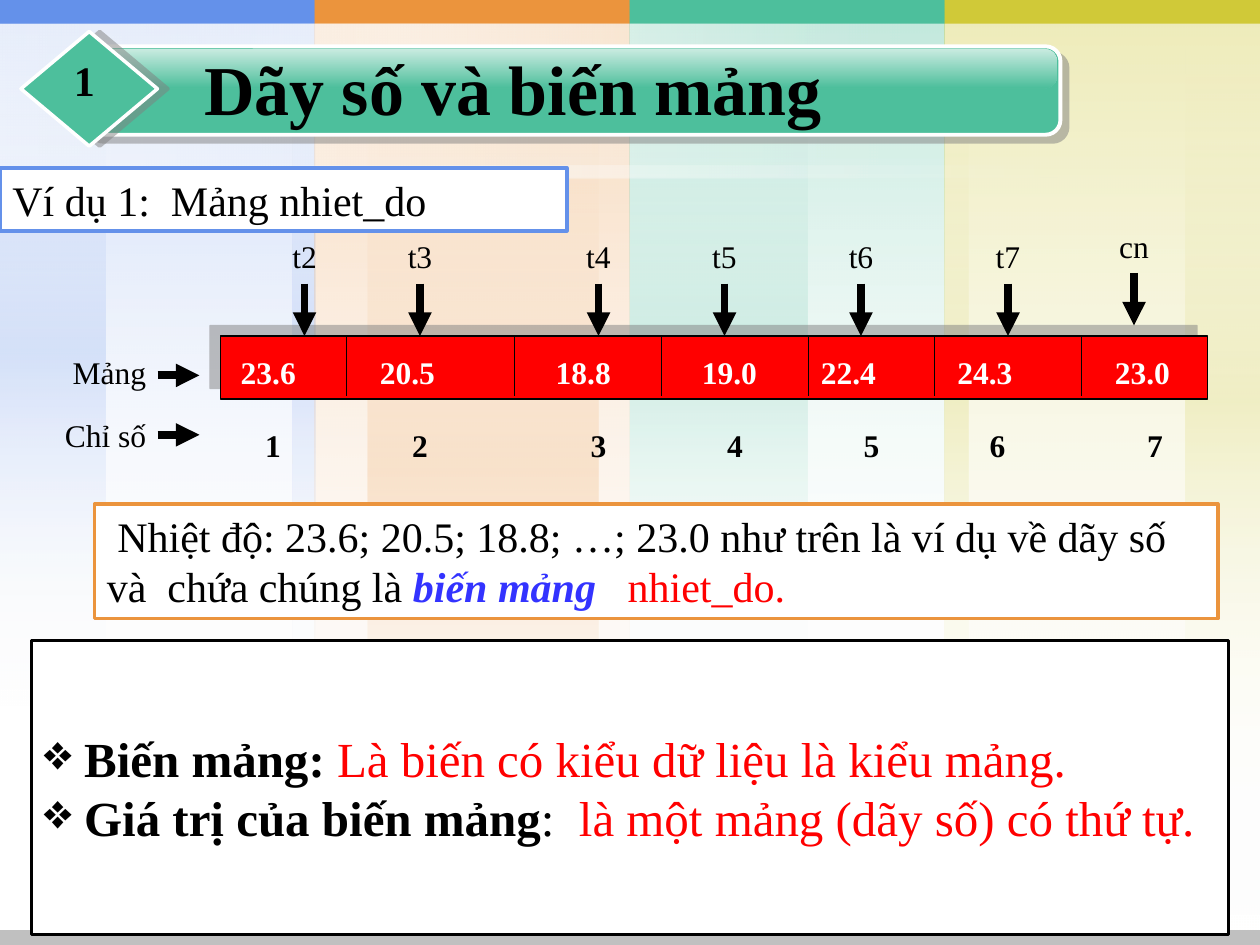
from lxml import etree
from pptx import Presentation
from pptx.dml.color import RGBColor
from pptx.enum import shapes, text
from pptx.oxml import ns
from pptx.util import Pt

FONT = "Times New Roman"
BLUE, ORANGE, GREEN, YELLOW = "6491EA", "EB943D", "4DBF9C", "D0C938"
BLACK, WHITE, RED = "000000", "FFFFFF", "FF0000"
RECT = shapes.MSO_SHAPE.RECTANGLE
ROUNDED = shapes.MSO_SHAPE.ROUNDED_RECTANGLE
DIAMOND = shapes.MSO_SHAPE.DIAMOND
CENTER = text.PP_ALIGN.CENTER


def color(value):
    return RGBColor.from_string(value)


def add_xml(parent, tag, **attributes):
    return etree.SubElement(parent, ns.qn(tag), attributes)


def add_alpha_color(parent, value, opacity):
    rgb = add_xml(parent, "a:srgbClr", val=value)
    add_xml(rgb, "a:alpha", val=str(opacity * 1000))


def add_shadow(effects, distance, angle):
    outer = add_xml(effects, "a:outerShdw", dist=str(Pt(distance)),
                    dir=str(angle * 60000), algn="ctr", rotWithShape="0")
    add_alpha_color(outer, "808080", 50)


def set_gradient(shape, stops):
    """Fill from top to bottom with (position, colour, opacity) stops."""
    shape.fill.background()
    gradient = etree.Element(ns.qn("a:gradFill"), rotWithShape="1")
    stop_list = add_xml(gradient, "a:gsLst")
    for position, value, opacity in stops:
        stop = add_xml(stop_list, "a:gs", pos=str(position * 1000))
        add_alpha_color(stop, value, opacity)
    add_xml(gradient, "a:lin", ang="5400000", scaled="0")
    properties = shape._element.spPr
    properties.replace(properties.find(ns.qn("a:noFill")), gradient)


def add_box(slide, frame, fill, kind=RECT, line=None, width=2, shadow=None,
            corner=None, rotation=0):
    """Draw a preset shape; fill is a hex colour or a list of stops."""
    shape = slide.shapes.add_shape(kind, *map(Pt, frame))
    shape.shadow.inherit = False
    shape.rotation = rotation
    if isinstance(fill, str):
        shape.fill.solid()
        shape.fill.fore_color.rgb = color(fill)
    else:
        set_gradient(shape, fill)
    if line:
        shape.line.color.rgb = color(line)
        shape.line.width = Pt(width)
    else:
        shape.line.fill.background()
    if corner:
        shape.adjustments[0] = corner
    if shadow:
        add_shadow(shape._element.spPr.find(ns.qn("a:effectLst")), *shadow)
    return shape


def write(shape, *paragraphs, size=18, align=text.PP_ALIGN.LEFT,
          anchor=text.MSO_ANCHOR.TOP, bullet=None, shadow=None, **style):
    """Write paragraphs, each a list of (wording, style) runs or a string."""
    frame = shape.text_frame
    frame.word_wrap = True
    frame.vertical_anchor = anchor
    for number, runs in enumerate(paragraphs):
        paragraph = frame.add_paragraph() if number else frame.paragraphs[0]
        paragraph.alignment = align
        if bullet:
            add_xml(paragraph._p.get_or_add_pPr(), "a:buChar", char=bullet)
        for wording, own in [(runs, {})] if isinstance(runs, str) else runs:
            look = {"ink": BLACK, "bold": False, "italic": False} | style | own
            run = paragraph.add_run()
            run.text = wording
            run.font.name, run.font.size = FONT, Pt(size)
            run.font.bold, run.font.italic = look["bold"], look["italic"]
            run.font.color.rgb = color(look["ink"])
            if shadow:
                effects = etree.Element(ns.qn("a:effectLst"))
                add_shadow(effects, *shadow)
                run.font._element.find(ns.qn("a:solidFill")).addnext(effects)


def add_label(slide, frame, wording, **style):
    write(slide.shapes.add_textbox(*map(Pt, frame)), wording, **style)


def add_line(slide, start, end, width=0.75, arrow=False):
    line = slide.shapes.add_connector(shapes.MSO_CONNECTOR.STRAIGHT,
                                      *map(Pt, start + end))
    line.line.color.rgb = color(BLACK)
    line.line.width = Pt(width)
    if arrow:
        add_xml(line.line._get_or_add_ln(), "a:tailEnd", type="triangle")
    add_xml(line._element.spPr, "a:effectLst")


def add_arrow(slide, start, end):
    add_line(slide, start, end, width=4.5, arrow=True)


def draw_background(slide):
    column = 180
    columns = [
        (BLUE, 405, [(167, 13), (0, 60.5)]),
        (ORANGE, 540, [(210, 132)]),
        (GREEN, 405, [(360, 101.5)]),
        (YELLOW, 538, [(540, 13.5), (677.5, 42.5)]),
    ]
    for number, (tint, height, strips) in enumerate(columns):
        left = number * column
        fade = [(0, tint, 20), (100, WHITE, 0)]
        glow = [(0, WHITE, 0), (50, tint, 20), (100, WHITE, 0)]
        strip_height = 459 if tint == YELLOW else height
        add_box(slide, (left, 0, column, height), fade)
        for strip_left, width in strips:
            add_box(slide, (strip_left, 0, width, strip_height), glow)
        add_box(slide, (left, 0, column, height), fade)
        add_box(slide, (left, 0, column, 13.5), tint)

    sheen = [(0, WHITE, 35), (100, WHITE, 0)]
    streak = [(0, WHITE, 0), (50, WHITE, 35), (100, WHITE, 0)]
    band = (227, -212.5, 88, 541)
    for frame, stops in [((299.5, -205, 7, 606), streak), (band, sheen),
                         ((220.5, -206.5, 21, 461.5), streak), (band, sheen)]:
        add_box(slide, frame, stops, rotation=270)
    add_box(slide, (0, 531.5, 720, 8.5), "C0C0C0")


def draw_title(slide):
    add_box(slide, (47, 26.5, 559, 50.5), GREEN, ROUNDED, WHITE, 2.25,
            shadow=(5.7, 45), corner=0.167)
    add_box(slide, (51, 28, 553, 22.5), [(0, WHITE, 70), (100, GREEN, 70)],
            ROUNDED, corner=0.315)
    add_label(slide, (109.5, 22.5, 466.5, 55.5), "Dãy số và biến mảng",
              size=40, bold=True, shadow=(2, 45))
    add_box(slide, (12, 18, 78, 65.5), GREEN, DIAMOND, WHITE, shadow=(6, 0))
    add_label(slide, (28, 27.5, 40.5, 36), "1", size=24, bold=True,
              align=CENTER)


def draw_array(slide):
    top, bottom = 192, 226.5
    add_box(slide, (126, top, 564, 36), RED, line=BLACK, width=0.75,
            shadow=(8.5, 225))
    for x in (198, 294, 378, 462, 534, 618):
        add_line(slide, (x, top), (x, bottom))

    # day, arrow x, arrow end, value, value left, index centre
    cells = [
        ("t2", 174, 192, " 23.6", 126, 156),
        ("t3", 240, 192, "20.5", 210, 240),
        ("t4", 342, 192, " 18.8", 306, 342),
        ("t5", 414, 192, "19.0", 394, 420),
        ("t6", 492, 192, "22.4", 462, 498),
        ("t7", 576, 192, "24.3", 540, 570),
        ("cn", 648, 186, "23.0", 630, 660),
    ]
    for index, (day, x, tip, value, left, middle) in enumerate(cells, 1):
        add_arrow(slide, (x, tip - 30), (x, tip))
        add_label(slide, (x - 42, tip - 60, 84, 29), day, align=CENTER)
        add_label(slide, (left, 198, 60, 29), value, ink=WHITE, bold=True)
        add_label(slide, (middle - 30, 240, 60, 29), str(index), bold=True,
                  align=CENTER)

    for name, left, y, arrow_y in [("Mảng", 34.5, 198, 214.5),
                                   ("Chỉ số", 30, 234, 248.5)]:
        add_label(slide, (left, y, 66, 29), name)
        add_arrow(slide, (90, arrow_y), (114, arrow_y))


def draw_notes(slide):
    red, strong = {"ink": RED}, {"bold": True}
    example = add_box(slide, (0, 96, 324, 36), WHITE, line=BLUE)
    write(example, "Ví dụ 1:  Mảng nhiet_do", size=24)

    remark = add_box(slide, (54, 288, 642, 65.5), WHITE, line=ORANGE)
    write(remark, [
        (" Nhiệt độ: 23.6; 20.5; 18.8; …; 23.0 như trên là ví dụ về dãy số "
         "và  chứa chúng là ", {}),
        ("biến mảng   ", {"ink": "3333FF", "bold": True, "italic": True}),
        ("nhiet_do.", red),
    ], size=24)

    definitions = add_box(slide, (18, 366, 684, 168), WHITE, line=BLACK)
    write(definitions,
          [(" Biến mảng: ", strong),
           ("Là biến có kiểu dữ liệu là kiểu mảng.", red)],
          [(" Giá trị của biến mảng", strong), (":  ", {}),
           ("là một mảng (dãy số) có thứ tự.", red)],
          size=28, anchor=text.MSO_ANCHOR.MIDDLE, bullet="❖")


def main():
    deck = Presentation()
    deck.slide_width, deck.slide_height = Pt(720), Pt(540)
    slide = deck.slides.add_slide(deck.slide_layouts[6])
    draw_background(slide)
    draw_array(slide)
    draw_title(slide)
    draw_notes(slide)
    deck.save("out.pptx")


if __name__ == "__main__":
    main()
